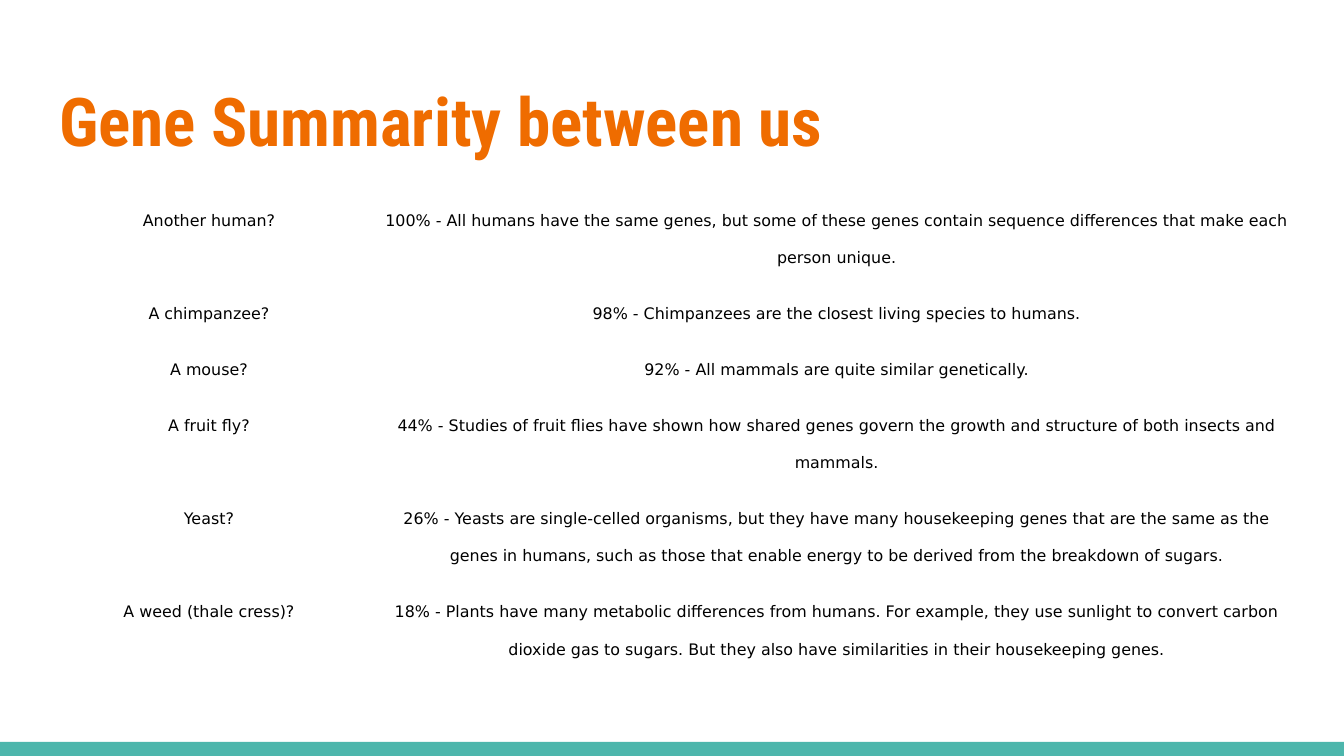
from pptx import Presentation
from pptx.dml.color import RGBColor
from pptx.enum.shapes import MSO_SHAPE
from pptx.enum.text import MSO_ANCHOR, MSO_AUTO_SIZE, PP_ALIGN
from pptx.util import Inches, Pt

# Content
TITLE = "Gene Summarity between us"
ROWS = [
    ("Another human?",
     "100% - All humans have the same genes, but some of these genes contain "
     "sequence differences that make each person unique."),
    ("A chimpanzee?",
     "98% - Chimpanzees are the closest living species to humans."),
    ("A mouse?",
     "92% - All mammals are quite similar genetically."),
    ("A fruit fly?",
     "44% - Studies of fruit flies have shown how shared genes govern the "
     "growth and structure of both insects and mammals."),
    ("Yeast?",
     "26% - Yeasts are single-celled organisms, but they have many "
     "housekeeping genes that are the same as the genes in humans, such as "
     "those that enable energy to be derived from the breakdown of sugars."),
    ("A weed (thale cress)?",
     "18% - Plants have many metabolic differences from humans. For example, "
     "they use sunlight to convert carbon dioxide gas to sugars. But they also "
     "have similarities in their housekeeping genes."),
]

# Style
ORANGE = RGBColor(0xEF, 0x6C, 0x00)
TEAL = RGBColor(0x4D, 0xB6, 0xAC)
BLACK = RGBColor(0, 0, 0)
COL_WIDTHS = (2.45, 6.89)
ONE_LINE, TWO_LINES = 0.41, 0.69
LINE_CHARS = 100  # longer answers wrap to a second line


def add_run(p, text, font, size, color, bold=False):
    r = p.add_run()
    r.text = text
    r.font.name, r.font.size, r.font.bold = font, Pt(size), bold
    r.font.color.rgb = color


def set_margins(frame, inset):
    frame.margin_left = frame.margin_right = Inches(inset)
    frame.margin_top = frame.margin_bottom = Inches(inset)


# Widescreen 16:9 slide
prs = Presentation()
prs.slide_width = Inches(10)
prs.slide_height = prs.slide_width * 9 // 16
s = prs.slides.add_slide(prs.slide_layouts[5])

# Bottom band
band_top = Inches(5.52)
band = s.shapes.add_shape(MSO_SHAPE.RECTANGLE, 0, band_top,
                          prs.slide_width, prs.slide_height - band_top)
band.shadow.inherit = False
band.fill.solid()
band.fill.fore_color.rgb = TEAL
band.line.fill.background()

# Title
title = s.shapes.title
title.left, title.top = Inches(0.34), Inches(0.49)
title.width, title.height = Inches(9.32), Inches(0.77)
tf = title.text_frame
tf.word_wrap, tf.auto_size = True, MSO_AUTO_SIZE.NONE
tf.vertical_anchor = MSO_ANCHOR.TOP
set_margins(tf, 0.1)
tf.paragraphs[0].alignment = PP_ALIGN.LEFT
add_run(tf.paragraphs[0], TITLE, "Roboto Condensed", 36, ORANGE, bold=True)

# Table of species and shared genes
heights = [TWO_LINES if len(answer) > LINE_CHARS else ONE_LINE for _, answer in ROWS]
table = s.shapes.add_table(len(ROWS), len(COL_WIDTHS), Inches(0.33), Inches(1.37),
                           Inches(sum(COL_WIDTHS)), Inches(sum(heights))).table
table.first_row = table.horz_banding = False
for col, width in zip(table.columns, COL_WIDTHS):
    col.width = Inches(width)
for row, height, texts in zip(table.rows, heights, ROWS):
    row.height = Inches(height)
    for cell, text in zip(row.cells, texts):
        cell.fill.background()
        cell.vertical_anchor = MSO_ANCHOR.TOP
        set_margins(cell, 0.07)
        p = cell.text_frame.paragraphs[0]
        p.alignment, p.line_spacing = PP_ALIGN.CENTER, 2.0
        add_run(p, text, "DejaVu Sans", 8.5, BLACK)

prs.save("out.pptx")
